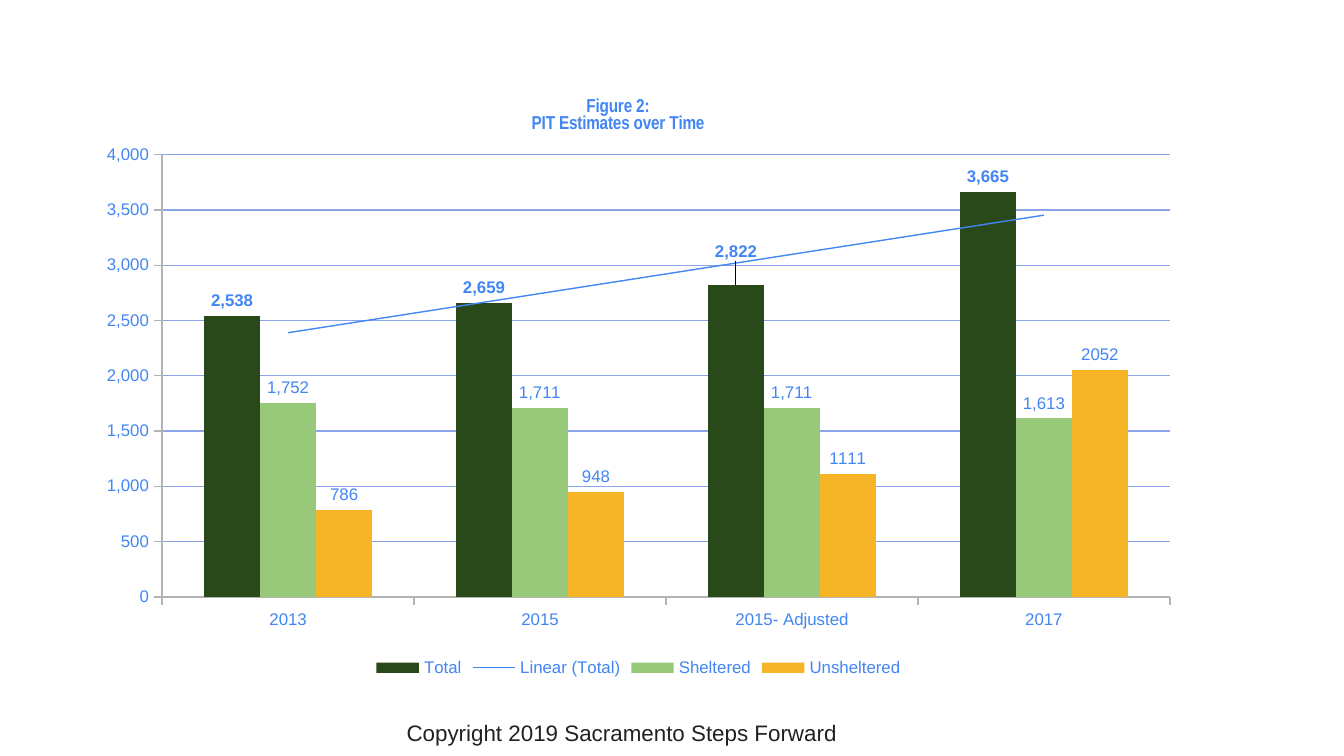
from dataclasses import dataclass

from lxml import etree
from pptx import Presentation
from pptx.chart.data import CategoryChartData
from pptx.dml.color import RGBColor
from pptx.enum.chart import (XL_CHART_TYPE, XL_LABEL_POSITION,
                             XL_LEGEND_POSITION, XL_TICK_MARK)
from pptx.enum.text import MSO_ANCHOR, PP_ALIGN
from pptx.oxml.ns import nsdecls, qn
from pptx.oxml import parse_xml
from pptx.util import Cm, Pt

COLUMN = XL_CHART_TYPE.COLUMN_CLUSTERED
OUTSIDE = XL_TICK_MARK.OUTSIDE
OUT_END = XL_LABEL_POSITION.OUTSIDE_END
BOTTOM = XL_LEGEND_POSITION.BOTTOM
CENTER = PP_ALIGN.CENTER
MIDDLE = MSO_ANCHOR.MIDDLE


@dataclass(frozen=True)
class Theme:
    blue: str = "4285F4"
    ink: str = "212121"
    grid: str = "8AA6E8"
    axis: str = "B3B3B3"
    face: str = "Arial"
    narrow: str = "Arial Narrow"
    small: float = 9
    head: float = 10
    foot: float = 12


THEME = Theme()
COMMA = "#,##0"
YEARS = ["2013", "2015", "2015- Adjusted", "2017"]
SERIES = [
    ("Total", [2538, 2659, 2822, 3665], "29491A", COMMA, True),
    ("Sheltered", [1752, 1711, 1711, 1613], "98C97A", COMMA, False),
    ("Unsheltered", [786, 948, 1111, 2052], "F6B527", "General", False),
]
TITLE = ["Figure 2:", "PIT Estimates over Time"]


def apply(item, values):
    for name, value in values.items():
        setattr(item, name, value)


def style(font, size=THEME.small, color=THEME.blue, name=THEME.face, bold=False):
    apply(font, {"size": Pt(size), "name": name, "bold": bold})
    font.color.rgb = RGBColor.from_string(color)


def draw_line(line, color, width=0.75):
    line.color.rgb = RGBColor.from_string(color)
    line.width = Pt(width)


def place(parent, index, modes=(), **spots):
    """Give a chart part a manual layout, as fractions of the chart."""
    old = parent.find(qn("c:layout"))
    if old is not None:
        parent.remove(old)
    layout = parse_xml(f"<c:layout {nsdecls('c')}/>")
    manual = etree.SubElement(layout, qn("c:manualLayout"))
    for tag, value in [*modes, *spots.items()]:
        etree.SubElement(manual, qn(f"c:{tag}")).set("val", str(value))
    parent.insert(index, layout)


def add_title(chart):
    frame = chart.chart_title.text_frame
    for i, text in enumerate(TITLE):
        para = frame.add_paragraph() if i else frame.paragraphs[0]
        para.alignment = CENTER
        run = para.add_run()
        run.text = text
        style(run.font, THEME.head, name=THEME.narrow, bold=True)
    chart.chart_title.include_in_layout = False
    edge = [("xMode", "edge"), ("yMode", "edge")]
    place(chart.chart_title._element, 1, edge, x=0.4, y=0.04)


def set_axes(chart):
    for axis in (chart.category_axis, chart.value_axis):
        apply(axis, {"major_tick_mark": OUTSIDE})
        style(axis.tick_labels.font)
        draw_line(axis.format.line, THEME.axis)
    axis = chart.value_axis
    apply(axis, {"minimum_scale": 0, "maximum_scale": 4000, "major_unit": 500,
                 "has_major_gridlines": True})
    apply(axis.tick_labels, {"number_format": COMMA,
                             "number_format_is_linked": False})
    draw_line(axis.major_gridlines.format.line, THEME.grid)


def set_bars(series, color, code, bold):
    fill = series.format.fill
    fill.solid()
    fill.fore_color.rgb = RGBColor.from_string(color)
    labels = series.data_labels
    apply(labels, {"show_value": True, "position": OUT_END,
                   "number_format": code, "number_format_is_linked": False})
    style(labels.font, bold=bold)


def lift_label(series, index, shift):
    label = series.points[index].data_label
    style(label.font, bold=True)
    label.position = OUT_END
    node = label._dLbl
    place(node, 1, x=0, y=shift)
    node.insert(2, parse_xml(
        f'<c:numFmt {nsdecls("c")} formatCode="{COMMA}" sourceLinked="0"/>'))


def add_trend(series):
    trend = parse_xml(
        f'<c:trendline {nsdecls("c", "a")}><c:name>Linear (Total)</c:name>'
        f'<c:spPr><a:ln w="9525"><a:solidFill><a:srgbClr val="{THEME.blue}"/>'
        '</a:solidFill></a:ln></c:spPr><c:trendlineType val="linear"/>'
        '<c:dispRSqr val="0"/><c:dispEq val="0"/></c:trendline>')
    series._element.find(qn("c:cat")).addprevious(trend)


def add_chart(slide):
    data = CategoryChartData()
    data.categories = YEARS
    for name, values, _, code, _ in SERIES:
        data.add_series(name, values, code)
    chart = slide.shapes.add_chart(
        COLUMN, Cm(1.6), Cm(1.3), Cm(20.93), Cm(11.61), data).chart
    style(chart.font, THEME.head)
    add_title(chart)
    set_axes(chart)
    plot = chart.plots[0]
    apply(plot, {"gap_width": 150, "overlap": 0, "vary_by_categories": False})
    for series, (_, _, color, code, bold) in zip(plot.series, SERIES):
        set_bars(series, color, code, bold)
    total = plot.series[0]
    lift_label(total, 2, -0.03)
    add_trend(total)
    chart.has_legend = True
    apply(chart.legend, {"position": BOTTOM, "include_in_layout": False})
    style(chart.legend.font)
    modes = [("layoutTarget", "inner"), ("xMode", "edge"), ("yMode", "edge")]
    area = chart._chartSpace.chart.plotArea
    place(area, 0, modes, x=0.07, y=0.14, w=0.91, h=0.72)


def add_footer(slide):
    box = slide.shapes.add_textbox(Cm(1.52), Cm(13.41), Cm(20.47), Cm(0.89))
    frame = box.text_frame
    apply(frame, {"word_wrap": True, "vertical_anchor": MIDDLE})
    para = frame.paragraphs[0]
    para.alignment = CENTER
    run = para.add_run()
    run.text = "Copyright 2019 Sacramento Steps Forward"
    style(run.font, THEME.foot, THEME.ink)


def main():
    deck = Presentation()
    apply(deck, {"slide_width": Cm(25.4), "slide_height": Cm(14.29)})
    slide = deck.slides.add_slide(deck.slide_layouts[6])
    add_footer(slide)
    add_chart(slide)
    deck.save("out.pptx")


if __name__ == "__main__":
    main()
